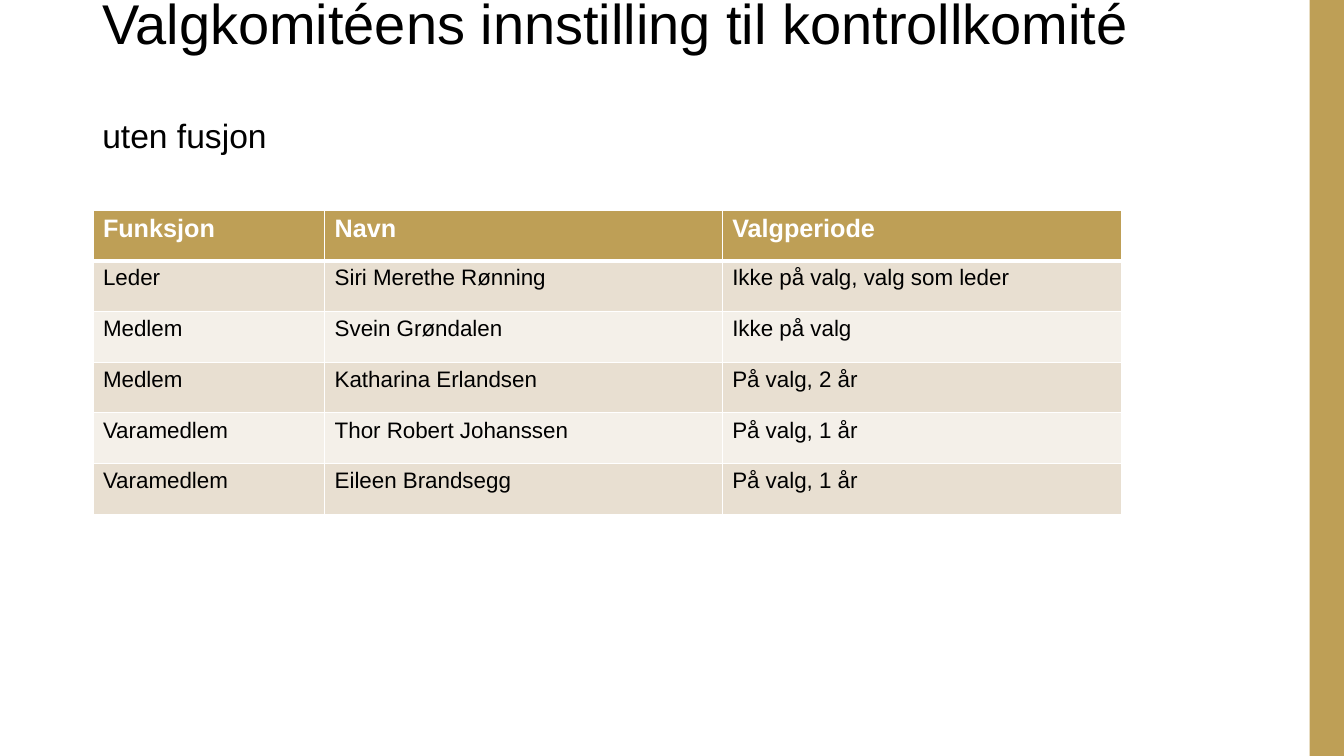
from lxml.etree import SubElement
from pptx import Presentation
from pptx.dml.color import RGBColor
from pptx.enum.shapes import MSO_SHAPE
from pptx.enum.text import MSO_ANCHOR
from pptx.oxml.ns import qn
from pptx.util import Pt

GOLD, SAND, CREAM = "BE9F56", "E8DFD1", "F4F0E9"
BLACK, WHITE = "000000", "FFFFFF"


def color(hex_code):
    return RGBColor.from_string(hex_code)


class SlideBuilder:
    font_name = "Arial"

    def __init__(self, slide):
        self.slide = slide

    def style(self, paragraph, size, hex_code, bold=False):
        for run in paragraph.runs:
            run.font.name = self.font_name
            run.font.size = Pt(size)
            run.font.bold = bold
            run.font.color.rgb = color(hex_code)

    def bar(self, left, top, width, height, fill):
        bar = self.slide.shapes.add_shape(
            MSO_SHAPE.RECTANGLE, Pt(left), Pt(top), Pt(width), Pt(height))
        bar.shadow.inherit = False
        bar.fill.solid()
        bar.fill.fore_color.rgb = color(fill)
        bar.line.fill.background()

    def heading(self, left, top, width, height, lines, gap):
        """Lines are (text, size) pairs, set apart by the gap."""
        heading = self.slide.shapes.add_textbox(
            Pt(left), Pt(top), Pt(width), Pt(height))
        frame = heading.text_frame
        frame.word_wrap = True
        frame.vertical_anchor = MSO_ANCHOR.BOTTOM
        frame.text = "\n".join(text for text, _ in lines)
        for index, (paragraph, (_, size)) in enumerate(zip(frame.paragraphs, lines)):
            paragraph.line_spacing = 0.9
            if index:
                paragraph.space_before = Pt(gap)
            self.style(paragraph, size, BLACK)

    def border(self, cell, side, width):
        properties = cell._tc.get_or_add_tcPr()
        line = SubElement(properties, qn(f"a:ln{side}"), w=str(Pt(width)))
        SubElement(SubElement(line, qn("a:solidFill")), qn("a:srgbClr"), val=WHITE)

    def table(self, left, top, widths, row_height, rows):
        table = self.slide.shapes.add_table(
            len(rows), len(widths), Pt(left), Pt(top),
            Pt(sum(widths)), Pt(row_height * len(rows))).table
        for column, width in zip(table.columns, widths):
            column.width = Pt(width)
        for index, values in enumerate(rows):
            table.rows[index].height = Pt(row_height)
            header = index == 0
            fill = GOLD if header else SAND if index % 2 else CREAM
            # A thick rule parts the header from the body
            edges = {"L": 1, "R": 1, "T": 3 if index == 1 else 1, "B": 3 if header else 1}
            for column, value in enumerate(values):
                cell = table.cell(index, column)
                for side, width in edges.items():
                    self.border(cell, side, width)
                cell.fill.solid()
                cell.fill.fore_color.rgb = color(fill)
                cell.text_frame.text = value
                self.style(cell.text_frame.paragraphs[0], 18 if header else 16,
                           WHITE if header else BLACK, header)


def main():
    presentation = Presentation()
    presentation.slide_width, presentation.slide_height = Pt(960), Pt(540)
    builder = SlideBuilder(
        presentation.slides.add_slide(presentation.slide_layouts[6]))

    # Gold edge
    builder.bar(935.5, 0, 24.5, 540, GOLD)

    # Title and subtitle
    builder.heading(66, 28.8, 757, 85.7, [
        ("Valgkomitéens innstilling til kontrollkomité", 40),
        ("uten fusjon", 24),
    ], gap=44.5)

    # Nominees
    builder.table(66.4, 150, [165.5, 284, 285.5], 36.25, [
        ("Funksjon", "Navn", "Valgperiode"),
        ("Leder", "Siri Merethe Rønning", "Ikke på valg, valg som leder"),
        ("Medlem", "Svein Grøndalen", "Ikke på valg"),
        ("Medlem", "Katharina Erlandsen", "På valg, 2 år"),
        ("Varamedlem", "Thor Robert Johanssen", "På valg, 1 år"),
        ("Varamedlem", "Eileen Brandsegg", "På valg, 1 år"),
    ])

    presentation.save("out.pptx")


if __name__ == "__main__":
    main()
